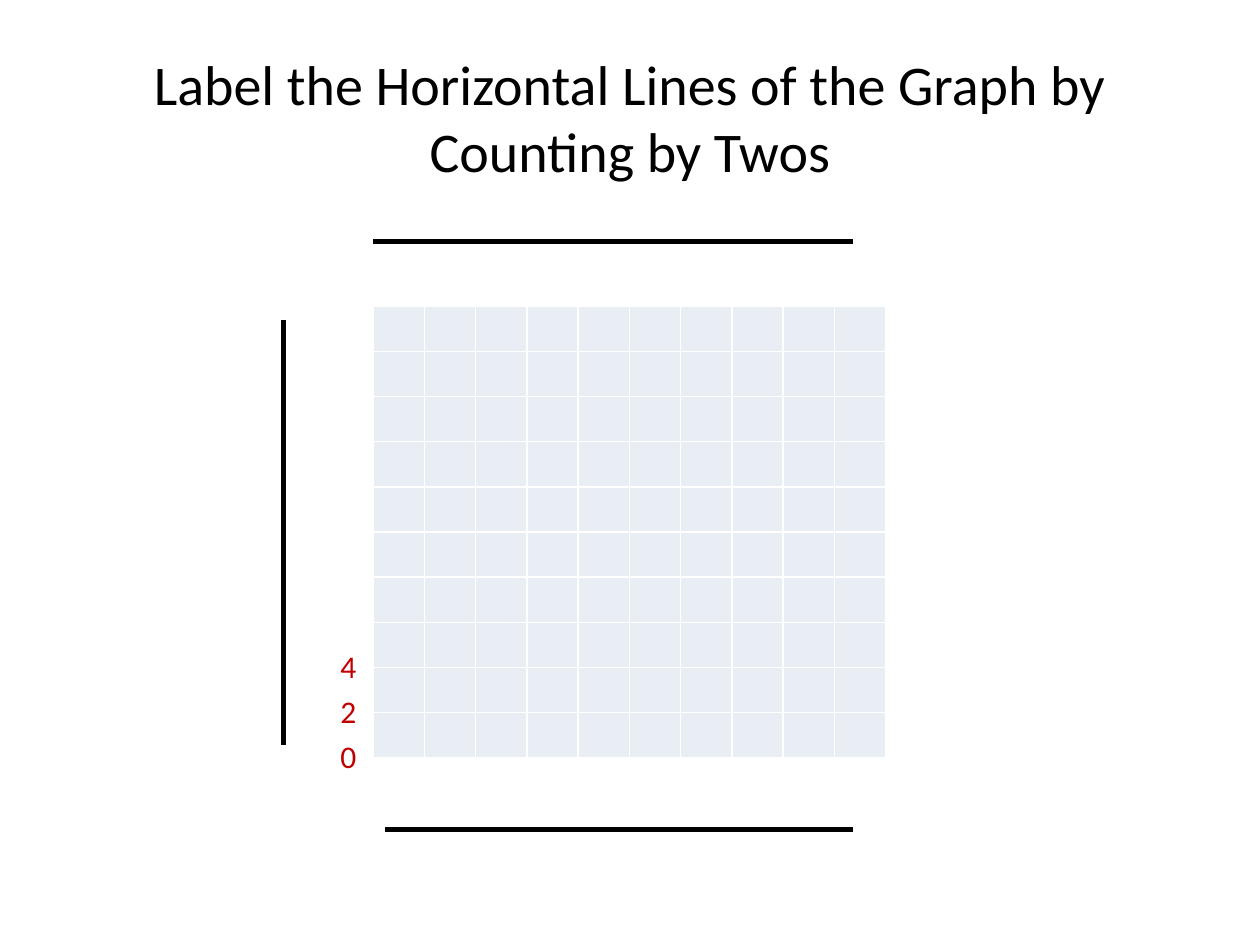
from lxml.etree import SubElement
from pptx import Presentation
from pptx.dml.color import RGBColor
from pptx.enum.shapes import MSO_CONNECTOR
from pptx.enum.text import MSO_ANCHOR, MSO_AUTO_SIZE, PP_ALIGN
from pptx.oxml.ns import qn
from pptx.util import Pt

BLACK = RGBColor(0x00, 0x00, 0x00)
WHITE = RGBColor(0xFF, 0xFF, 0xFF)
CELL_BLUE = RGBColor(0xE9, 0xED, 0xF4)
LABEL_RED = RGBColor(0xC0, 0x00, 0x00)

GRID_SIZE = 10
GRID_LEFT, GRID_TOP = 213.2, 175
COLUMN_WIDTH, ROW_HEIGHT = 29.3, 25.8
GRID_BOTTOM = GRID_TOP + GRID_SIZE * ROW_HEIGHT

# Start and end points of the blanks for the graph title and axis names
BLANKS = [
    (213.2, 138.2, 487.4, 138.2),
    (220.3, 473.8, 487.4, 473.8),
    (162, 182.9, 162, 425.5),
]


def format_font(font, size, color):
    for name, value in {"name": "Calibri", "size": Pt(size)}.items():
        setattr(font, name, value)
    font.color.rgb = color


def add_title(slide, text):
    title = slide.shapes.title
    box = {"left": 36, "top": 21.6, "width": 648, "height": 90}
    for name, value in box.items():
        setattr(title, name, Pt(value))
    frame = title.text_frame
    frame.text = text
    frame.word_wrap = True
    frame.vertical_anchor = MSO_ANCHOR.MIDDLE
    frame.paragraphs[0].alignment = PP_ALIGN.CENTER
    format_font(frame.paragraphs[0].runs[0].font, 32, BLACK)


def add_cell_borders(cell):
    """Insert the four border lines ahead of the fill, as the schema orders."""
    properties = cell._tc.get_or_add_tcPr()
    for position, side in enumerate(("a:lnL", "a:lnR", "a:lnT", "a:lnB")):
        border = SubElement(properties, qn(side), w=str(Pt(1)))
        fill = SubElement(border, qn("a:solidFill"))
        SubElement(fill, qn("a:srgbClr"), val=str(WHITE))
        properties.insert(position, border)


def add_grid(slide):
    grid = slide.shapes.add_table(
        GRID_SIZE, GRID_SIZE, Pt(GRID_LEFT), Pt(GRID_TOP),
        Pt(GRID_SIZE * COLUMN_WIDTH), Pt(GRID_SIZE * ROW_HEIGHT)).table
    grid.first_row = grid.horz_banding = False
    for column in grid.columns:
        column.width = Pt(COLUMN_WIDTH)
    for row in grid.rows:
        row.height = Pt(ROW_HEIGHT)
    for cell in grid.iter_cells():
        # Without margins an empty line of text fits the row height
        cell.margin_top = cell.margin_bottom = 0
        cell.fill.solid()
        cell.fill.fore_color.rgb = CELL_BLUE
        add_cell_borders(cell)


def add_blank(slide, points):
    blank = slide.shapes.add_connector(
        MSO_CONNECTOR.STRAIGHT, *(Pt(value) for value in points))
    blank.line.color.rgb = BLACK
    blank.line.width = Pt(2.89)
    SubElement(blank._element.spPr, qn("a:effectLst"))


def add_line_label(slide, number, line_index):
    """Label a horizontal grid line, counted up from the bottom."""
    top = GRID_BOTTOM - 15.2 - line_index * ROW_HEIGHT
    label = slide.shapes.add_textbox(Pt(187.4), Pt(top), Pt(24), Pt(29))
    frame = label.text_frame
    frame.word_wrap = True
    frame.auto_size = MSO_AUTO_SIZE.SHAPE_TO_FIT_TEXT
    frame.text = str(number)
    format_font(frame.paragraphs[0].runs[0].font, 18, LABEL_RED)


def main():
    presentation = Presentation()
    presentation.slide_width, presentation.slide_height = Pt(720), Pt(540)
    slide = presentation.slides.add_slide(presentation.slide_layouts[5])
    add_title(slide, "Label the Horizontal Lines of the Graph by Counting by Twos")
    add_grid(slide)
    for points in BLANKS:
        add_blank(slide, points)
    for line_index, number in enumerate((0, 2, 4)):
        add_line_label(slide, number, line_index)
    presentation.save("out.pptx")


if __name__ == "__main__":
    main()
